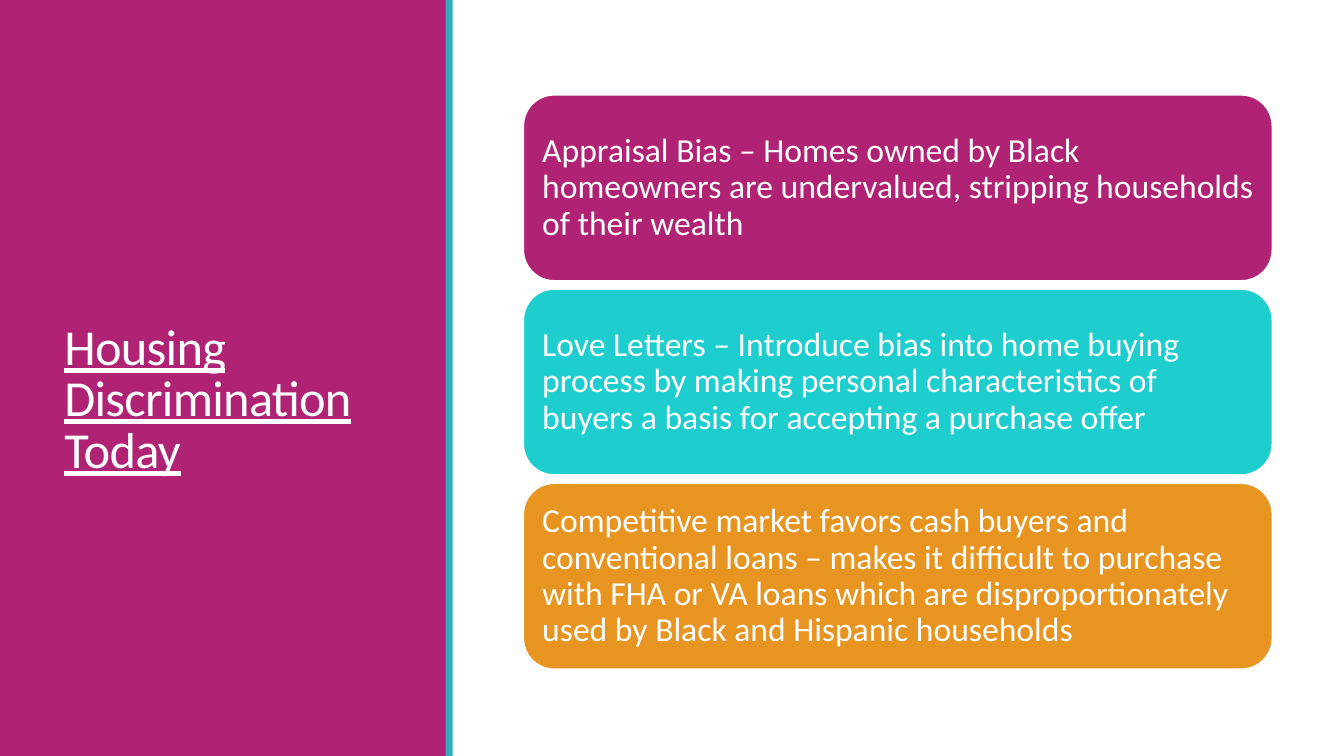
from dataclasses import dataclass

from pptx import Presentation
from pptx.dml.color import RGBColor
from pptx.enum.shapes import MSO_SHAPE
from pptx.enum.text import MSO_ANCHOR, PP_ALIGN
from pptx.util import Inches, Pt

RECT, ROUNDED = MSO_SHAPE.RECTANGLE, MSO_SHAPE.ROUNDED_RECTANGLE
MIDDLE, LEFT = MSO_ANCHOR.MIDDLE, PP_ALIGN.LEFT


@dataclass(frozen=True)
class Theme:
    magenta: str = "B02273"
    teal: str = "36ACB8"
    turquoise: str = "1ECECF"
    orange: str = "E89420"
    white: str = "FFFFFF"
    font: str = "Calibri"
    title_size: int = 36
    card_size: int = 24


THEME = Theme()
WIDTH, HEIGHT = 13.33, 7.5
TITLE = "Housing Discrimination Today"
CARDS = [
    (THEME.magenta, "Appraisal Bias – Homes owned by Black homeowners are "
     "undervalued, stripping households of their wealth"),
    (THEME.turquoise, "Love Letters – Introduce bias into home buying process by making "
     "personal characteristics of buyers a basis for accepting a purchase offer"),
    (THEME.orange, "Competitive market favors cash buyers and conventional loans – makes it "
     "difficult to purchase with FHA or VA loans which are disproportionately used by "
     "Black and Hispanic households"),
]


def add_block(page, kind, box, color):
    """Add a filled shape without line or shadow."""
    shape = page.shapes.add_shape(kind, *map(Inches, box))
    shape.shadow.inherit = False
    shape.fill.solid()
    shape.fill.fore_color.rgb = RGBColor.from_string(color)
    shape.line.fill.background()
    return shape


def write_text(frame, text, size, line_spacing):
    """Fill a frame with one white, left-aligned, vertically centred paragraph."""
    frame.word_wrap = True
    frame.vertical_anchor = MIDDLE
    para = frame.paragraphs[0]
    para.text = text
    para.alignment = LEFT
    para.line_spacing = line_spacing
    para.font.name = THEME.font
    para.font.size = Pt(size)
    para.font.color.rgb = RGBColor.from_string(THEME.white)
    return para


def add_title_panel(page, box):
    """Coloured side panel with its edge stripe and the underlined title."""
    left, top, width, height = box
    add_block(page, RECT, box, THEME.magenta)
    add_block(page, RECT, (left + width - 0.01, top, 0.07, height), THEME.teal)

    title_box = (left + 0.54, top + 0.57, width - 1.06, height - 1.19)
    frame = page.shapes.add_textbox(*map(Inches, title_box)).text_frame
    # The title sits half a line below the middle of its box
    frame.margin_top = Inches(0.56)
    para = write_text(frame, TITLE, THEME.title_size, 0.85)
    para.font.underline = True
    # Character spacing in hundredths of a point
    para.runs[0].font._rPr.set("spc", "-50")


def add_cards(page, box, gap):
    """Equal rounded cards stacked down the box."""
    left, top, width, height = box
    card_height = (height - gap * (len(CARDS) - 1)) / len(CARDS)
    for index, (color, text) in enumerate(CARDS):
        card_top = top + index * (card_height + gap)
        card = add_block(page, ROUNDED, (left, card_top, width, card_height), color)
        card.line.color.rgb = RGBColor.from_string(THEME.white)
        card.line.width = Pt(1.25)
        frame = card.text_frame
        frame.margin_left = frame.margin_right = Inches(0.1)
        frame.margin_top = frame.margin_bottom = Inches(0.1)
        write_text(frame, text, THEME.card_size, 0.9)


def main():
    deck = Presentation()
    deck.slide_width, deck.slide_height = Inches(WIDTH), Inches(HEIGHT)
    page = deck.slides.add_slide(deck.slide_layouts[6])
    add_title_panel(page, (0, 0, 4.43, HEIGHT))
    add_cards(page, (5.19, 0.94, 7.43, 5.7), gap=0.08)
    deck.save("out.pptx")


if __name__ == "__main__":
    main()
